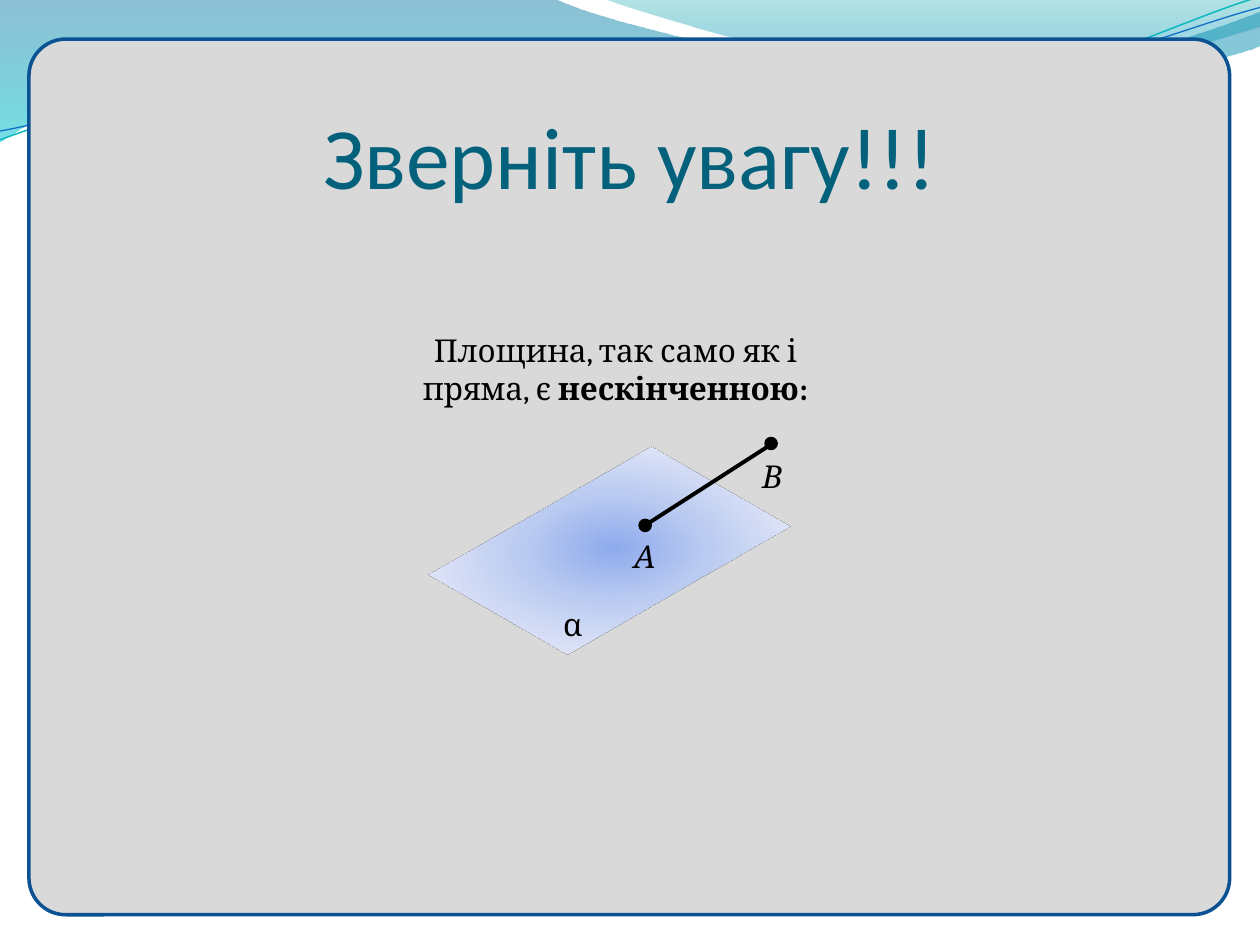
from math import cos, radians, sin

from lxml import etree
from pptx import Presentation
from pptx.dml.color import RGBColor
from pptx.enum.shapes import MSO_CONNECTOR, MSO_SHAPE
from pptx.enum.text import MSO_ANCHOR, MSO_AUTO_SIZE, PP_ALIGN
from pptx.oxml.ns import qn
from pptx.util import Inches, Pt

LINE = MSO_CONNECTOR.STRAIGHT
RECT, ROUND, OVAL = MSO_SHAPE.RECTANGLE, MSO_SHAPE.ROUNDED_RECTANGLE, MSO_SHAPE.OVAL
CENTER, LEFT = PP_ALIGN.CENTER, PP_ALIGN.LEFT
BOTTOM = MSO_ANCHOR.BOTTOM
GROW, FIXED = MSO_AUTO_SIZE.SHAPE_TO_FIT_TEXT, MSO_AUTO_SIZE.NONE

WIDE, HIGH = 10, 7.5
INK = {"panel": "D9D9D9", "edge": "0B5292", "title": "04617B", "text": "000000",
       "teal": "0AB8BF", "blue": "0F6FC6"}

# Outlines: a start, then pieces of one point (straight) or three (Bezier).
# Gradient stops: position %, colour, opacity %.
WAVES = [
    ([[(0, 0)], [(4.4, -0.01)],
      [(4.76, 0.17), (6.64, 0.63), (7.58, 0.63)],
      [(8.53, 0.63), (9.58, 0.26), (10, 0.09)], [(10.01, 0.36)],
      [(9.83, 0.44), (8.7, 0.76), (7.46, 0.75)],
      [(6.22, 0.75), (3.82, 0.28), (2.57, 0.34)],
      [(1.29, 0.36), (0.46, 0.83), (-0.01, 1.13)], [(0, 0)]],
     [(0, "0074A1", 45), (100, "00C6CF", 55)]),
    ([[(4.79, -0.01)],
      [(5.09, 0.11), (6.82, 0.62), (7.69, 0.65)],
      [(8.56, 0.69), (9.61, 0.32), (10, 0.21)], [(10, 0)], [(4.79, -0.01)]],
     [(0, "00A1A9", 30), (80, "008BBF", 45)]),
]
STRANDS = [
    ([[(0, 1.11)],
      [(0.48, 0.93), (1.58, 0.57), (2.77, 0.52)],
      [(3.95, 0.47), (5.93, 0.89), (7.13, 0.8)],
      [(8.33, 0.71), (9.38, 0.15), (9.98, -0.02)]], (4.99, 0.58), "teal", 0.85),
    ([[(0, 1.04)],
      [(0.47, 0.96), (1.64, 0.61), (2.83, 0.56)],
      [(4.03, 0.51), (5.97, 0.84), (7.17, 0.75)],
      [(8.36, 0.67), (9.41, 0.21), (10, 0.06)]], (5, 0.59), "blue", 0.75),
]
TILT = -2.7
PLANE = (3.59, 3.59, 2.5, 1.56)
GLOW = [(0, "8EABEE", 100), (50, "BBCBF2", 100), (100, "DEE5F8", 100)]
LINK = (5.15, 4.15, 6.1, 3.54)
DOTS = [(5.08, 4.13), (6.08, 3.48)]
DOT = 0.08
LABELS = [("α", 4.37, 4.75, False), ("А", 4.93, 4.21, True), ("В", 5.95, 3.58, True)]
CLAIM = [("Площина, так само як і пряма, є ", False), ("нескінченною:", True)]
TITLE = "Зверніть увагу!!!"

deck = Presentation()
deck.slide_width, deck.slide_height = Inches(WIDE), Inches(HIGH)
slide = deck.slides.add_slide(deck.slide_layouts[6])
shapes = slide.shapes


def rgb(name):
    return RGBColor.from_string(INK[name])


def draw(outline, close=False):
    """Build a freeform, then join each three-point piece into a Bezier."""
    points = [(Inches(x), Inches(y)) for piece in outline for x, y in piece]
    pen = shapes.build_freeform(*points[0])
    pen.add_line_segments(points[1:], close=close)
    form = pen.convert_to_shape()
    form.shadow.inherit = False
    steps = form._element.spPr.iter(qn("a:lnTo"))
    steps = iter(list(steps))
    for piece in outline[1:]:
        group = [next(steps) for _ in piece]
        if len(group) == 3:
            curve = etree.Element(qn("a:cubicBezTo"))
            group[0].addprevious(curve)
            for step in group:
                curve.append(step[0])
                step.getparent().remove(step)
    return form


def turn(outline, hub, angle):
    a, (cx, cy) = radians(angle), hub
    return [[(cx + (x - cx) * cos(a) - (y - cy) * sin(a),
              cy + (x - cx) * sin(a) + (y - cy) * cos(a)) for x, y in piece]
            for piece in outline]


def shade(form, stops, radial=False):
    """Fill with a gradient whose stops may be see-through."""
    form.fill.gradient()
    grad = form._element.spPr.find(qn("a:gradFill"))
    for child in list(grad):
        grad.remove(child)
    rows = etree.SubElement(grad, qn("a:gsLst"))
    for place, color, alpha in stops:
        stop = etree.SubElement(rows, qn("a:gs"), pos=str(place * 1000))
        tint = etree.SubElement(stop, qn("a:srgbClr"), val=color)
        if alpha < 100:
            etree.SubElement(tint, qn("a:alpha"), val=str(alpha * 1000))
    if radial:
        ring = etree.SubElement(grad, qn("a:path"), path="circle")
        etree.SubElement(ring, qn("a:fillToRect"), l="50000", t="50000", r="50000", b="50000")
    else:
        etree.SubElement(grad, qn("a:lin"), ang="5400000", scaled="0")


def solid(kind, box, fill, edge):
    form = shapes.add_shape(kind, *map(Inches, box))
    form.shadow.inherit = False
    form.fill.solid()
    form.fill.fore_color.rgb = rgb(fill)
    form.line.color.rgb, form.line.width = rgb(edge), Pt(2)
    return form


def tip(form):
    """Lay a shape down in isometric view."""
    scene = etree.SubElement(form._element.spPr, qn("a:scene3d"))
    etree.SubElement(scene, qn("a:camera"), prst="isometricTopUp")
    etree.SubElement(scene, qn("a:lightRig"), rig="threePt", dir="t")


def write(box, runs, size=18, face="Cambria", ink="text", align=LEFT, slant=False,
          wrap=True, fit=GROW):
    frame = shapes.add_textbox(*map(Inches, box)).text_frame
    frame.word_wrap, frame.auto_size = wrap, fit
    line = frame.paragraphs[0]
    line.alignment = align
    for words, bold in runs:
        run = line.add_run()
        run.text = words
        font = run.font
        font.name, font.size, font.bold, font.italic = face, Pt(size), bold, slant
        font.color.rgb = rgb(ink)
    return frame


for outline, stops in WAVES:
    wave = draw(outline, True)
    shade(wave, stops)
    wave.line.fill.background()
for outline, hub, ink, width in STRANDS:
    strand = draw(turn(outline, hub, -TILT))
    strand.rotation = TILT
    strand.fill.background()
    strand.line.color.rgb, strand.line.width = rgb(ink), Pt(width)

panel = solid(ROUND, (0.23, 0.31, 9.53, 6.95), "panel", "edge")
panel.adjustments[0] = 0.042
plane = solid(RECT, PLANE, "panel", "text")
shade(plane, GLOW, radial=True)
tip(plane)

write((*LABELS[0][1:3], 0.31, 0.4), [(LABELS[0][0], False)], wrap=False)
line = shapes.add_connector(LINE, *map(Inches, LINK))
line.line.color.rgb, line.line.width = rgb("text"), Pt(2.25)
etree.SubElement(line._element.spPr, qn("a:effectLst"))
for (x, y), (words, left, top, slant) in zip(DOTS, LABELS[1:]):
    solid(OVAL, (x, y, DOT, DOT), "text", "text")
    write((left, top, 0.3, 0.4), [(words, False)], slant=slant, wrap=False)

write((2.97, 2.58, 3.83, 0.71), CLAIM, align=CENTER)
head = write((0.5, 0.32, 9, 1.32), [(TITLE, False)], 50, "Calibri", "title", CENTER, fit=FIXED)
head.vertical_anchor = BOTTOM
head.margin_left = head.margin_right = head.margin_bottom = 0

deck.save("out.pptx")
